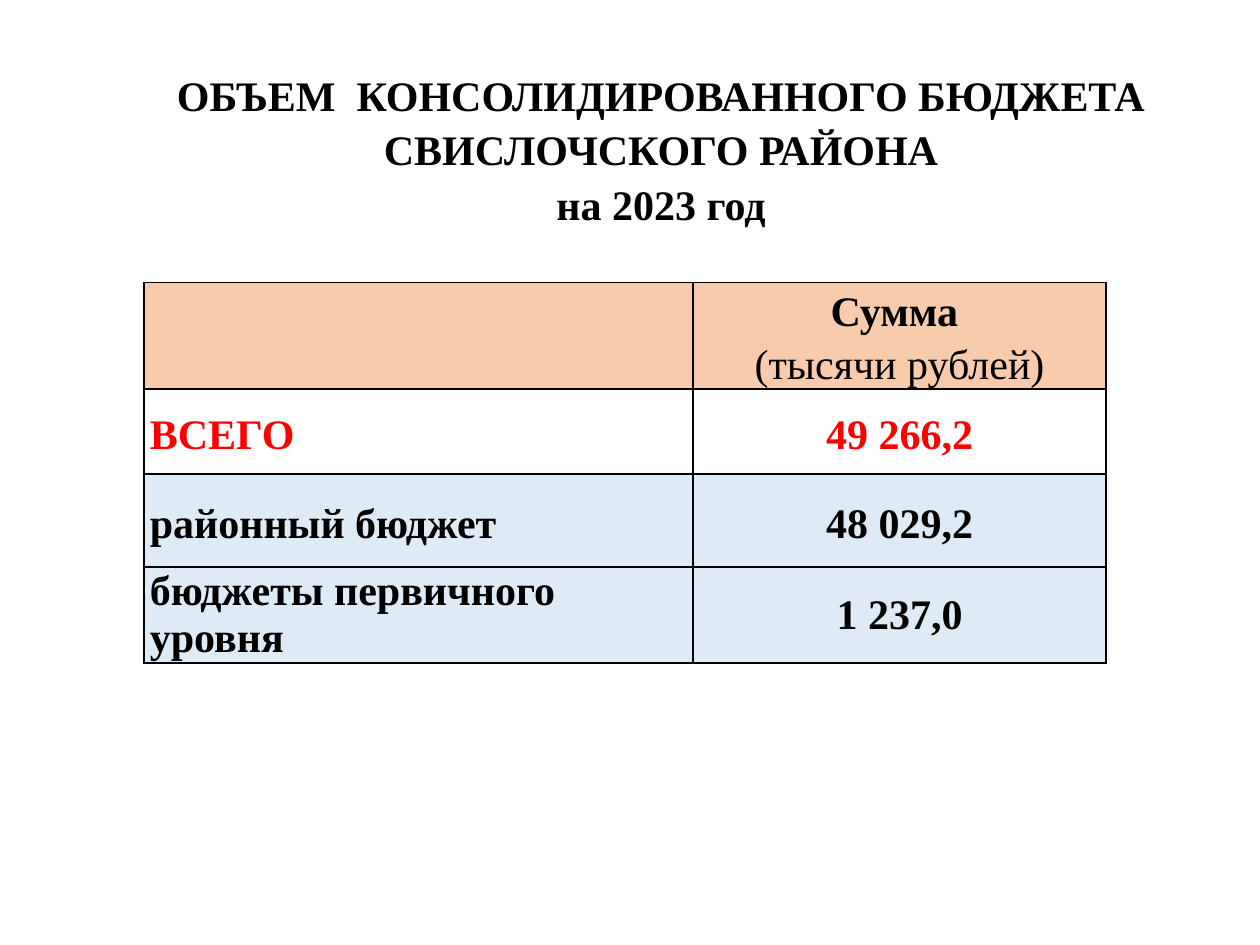
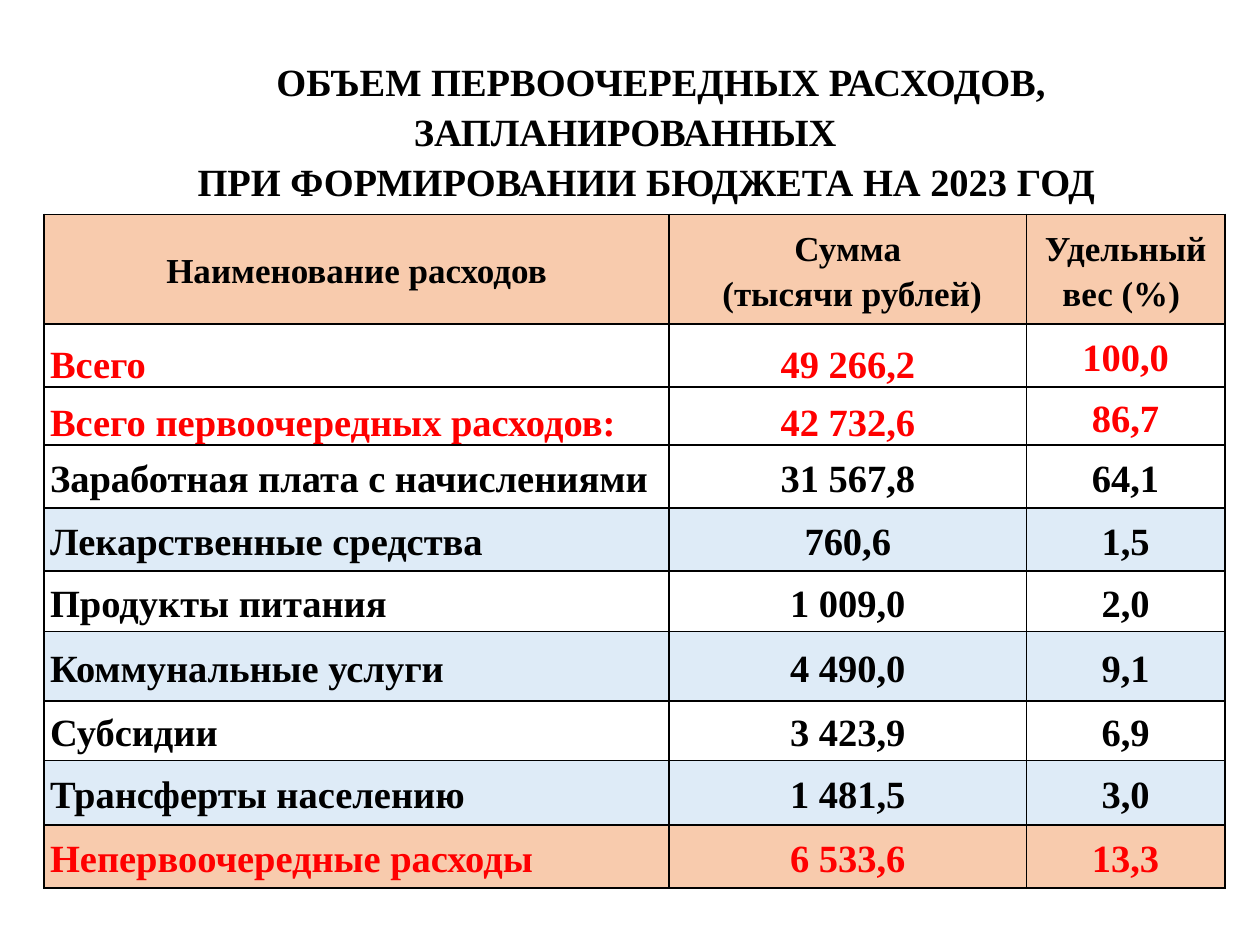
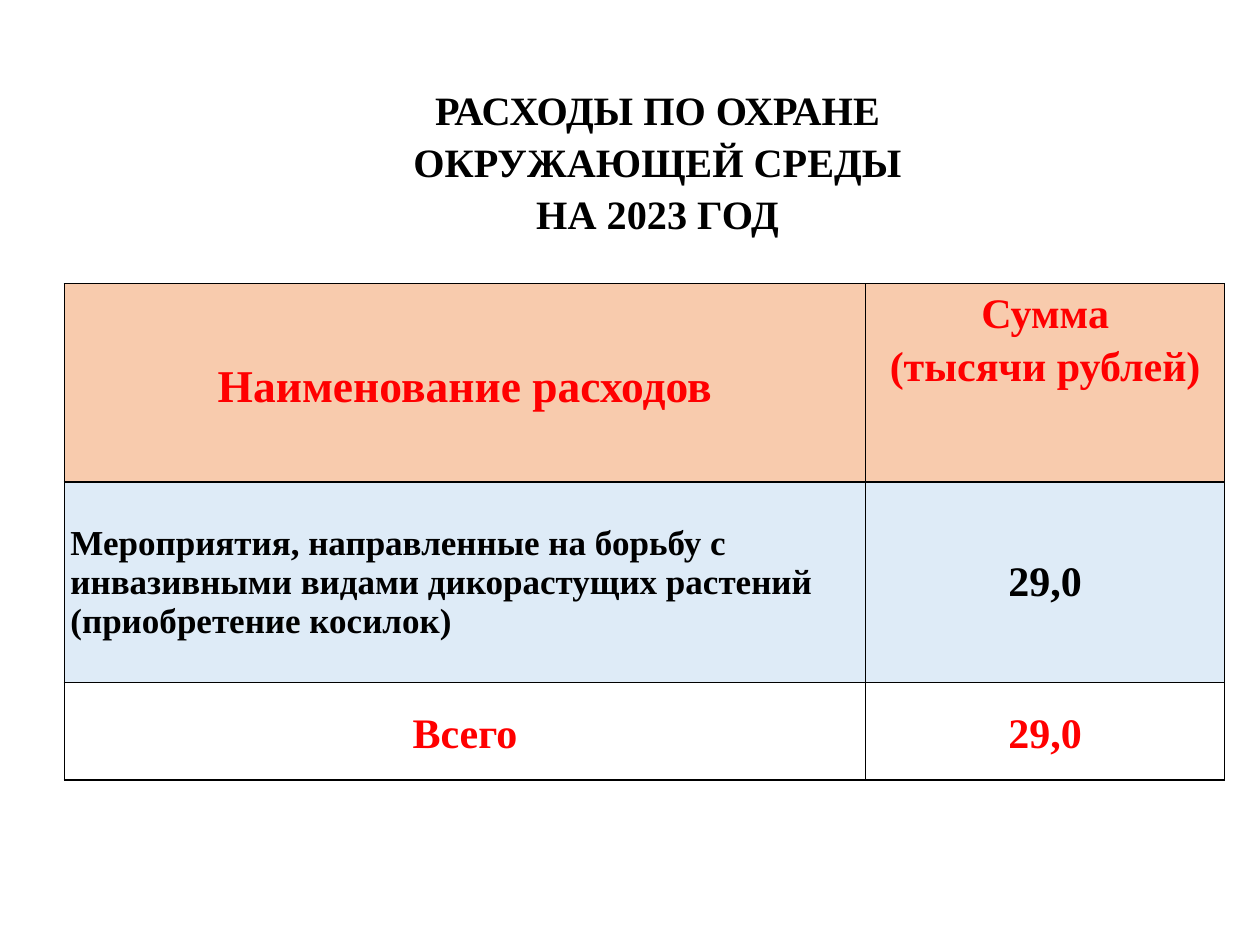
from dataclasses import dataclass

from lxml import etree
from pptx import Presentation
from pptx.dml.color import RGBColor
from pptx.enum.text import MSO_ANCHOR, MSO_AUTO_SIZE, PP_ALIGN
from pptx.oxml.ns import qn
from pptx.util import Cm, Pt

LEFT, CENTER = PP_ALIGN.LEFT, PP_ALIGN.CENTER
TOP, MIDDLE, BOTTOM = MSO_ANCHOR.TOP, MSO_ANCHOR.MIDDLE, MSO_ANCHOR.BOTTOM
NO_FIT = MSO_AUTO_SIZE.NONE

FONT = "Times New Roman"
COLORS = {"black": "000000", "red": "FF0000", "peach": "F8CBAD", "blue": "DEEBF7"}
TITLE_ONLY = 5
INDENT = 1.25


@dataclass
class Row:
    height: float
    texts: tuple
    fill: str = ""
    color: str = "black"
    spacing: float = 1.15


class Deck:
    """Holds the shared style and the current slide."""

    def __init__(self):
        self.prs = Presentation()
        self.prs.slide_width, self.prs.slide_height = Cm(25.4), Cm(19.05)
        self.s = None

    def rgb(self, name):
        return RGBColor.from_string(COLORS[name])

    def style(self, p, size, color="black", align=CENTER, spacing=1.0):
        p.alignment, p.line_spacing = align, spacing
        for r in p.runs:
            r.font.name, r.font.size, r.font.bold = FONT, Pt(size), True
            r.font.color.rgb = self.rgb(color)

    def slide(self, box, size, lines):
        """Start a slide; each title line is a text with its first-line indent."""
        self.s = self.prs.slides.add_slide(self.prs.slide_layouts[TITLE_ONLY])
        sp = self.s.shapes.title
        sp.left, sp.top, sp.width, sp.height = (Cm(v) for v in box)
        tf = sp.text_frame
        tf.text = "\n".join(text for text, _ in lines)
        tf.word_wrap, tf.auto_size, tf.vertical_anchor = True, NO_FIT, TOP
        for p, (_, indent) in zip(tf.paragraphs, lines):
            self.style(p, size, spacing=1.08)
            p._p.get_or_add_pPr().set("indent", str(Cm(indent)))

    def border(self, cell):
        tc_pr = cell._tc.get_or_add_tcPr()
        for side in ("lnL", "lnR", "lnT", "lnB"):
            ln = etree.SubElement(tc_pr, qn(f"a:{side}"), w=str(Pt(1)))
            fill = etree.SubElement(ln, qn("a:solidFill"))
            etree.SubElement(fill, qn("a:srgbClr"), val=COLORS["black"])

    def cell(self, cell, text, size, row, align):
        cell.margin_left = cell.margin_right = Cm(0.12)
        cell.margin_top = cell.margin_bottom = 0
        cell.vertical_anchor = MIDDLE
        self.border(cell)
        if row.fill:
            cell.fill.solid()
            cell.fill.fore_color.rgb = self.rgb(row.fill)
        else:
            cell.fill.background()
        cell.text_frame.text = text
        for p in cell.text_frame.paragraphs:
            self.style(p, size, row.color, align, row.spacing)

    def table(self, left, top, widths, rows, size):
        """Add a table with a centred header and left-aligned first column."""
        height = sum(row.height for row in rows)
        frame = self.s.shapes.add_table(len(rows), len(widths), Cm(left), Cm(top),
                                        Cm(sum(widths)), Cm(height))
        table = frame.table
        table.first_row = table.horz_banding = False
        for column, width in zip(table.columns, widths):
            column.width = Cm(width)
        for i, row in enumerate(rows):
            table.rows[i].height = Cm(row.height)
            for j, text in enumerate(row.texts):
                align = LEFT if i and not j else CENTER
                self.cell(table.cell(i, j), text, size, row, align)
        return table

    def resize(self, cell, size):
        for p in cell.text_frame.paragraphs:
            for r in p.runs:
                r.font.size = Pt(size)


def budget_slide(deck):
    deck.slide((0, 1.19, 25.4, 4.11), 24, [
        ("ОБЪЕМ  КОНСОЛИДИРОВАННОГО БЮДЖЕТА", INDENT),
        ("СВИСЛОЧСКОГО РАЙОНА", INDENT),
        ("на 2023 год", INDENT),
    ])
    table = deck.table(2.9, 5.69, (11.07, 8.33), [
        Row(2.08, ("", "Сумма \n(тысячи рублей)"), "peach"),
        Row(1.71, ("ВСЕГО", "49 266,2"), color="red"),
        Row(1.88, ("районный бюджет", "48 029,2"), "blue"),
        Row(1.93, ("бюджеты первичного уровня", "1 237,0"), "blue", spacing=1.0),
    ], 24)
    # Unit line of the header is not bold
    header = table.cell(0, 1)
    header.vertical_anchor = TOP
    header.text_frame.paragraphs[1].runs[0].font.bold = False


def priority_slide(deck):
    deck.slide((0, 0.97, 25.4, 3.84), 22, [
        ("ОБЪЕМ ПЕРВООЧЕРЕДНЫХ РАСХОДОВ, ЗАПЛАНИРОВАННЫХ ", INDENT),
        ("ПРИ ФОРМИРОВАНИИ БЮДЖЕТА НА 2023 ГОД", 0.65),
    ])
    table = deck.table(0.89, 4.32, (12.6, 7.2, 4), [
        Row(2.21, ("Наименование расходов", "Сумма\n (тысячи рублей)",
                   "Удельный вес (%) "), "peach"),
        Row(1.27, ("Всего", "49 266,2", "100,0"), color="red"),
        Row(1.17, ("Всего первоочередных расходов:", "42 732,6", "86,7"), color="red"),
        Row(1.27, ("Заработная плата с начислениями", "31 567,8", "64,1")),
        Row(1.27, ("Лекарственные средства", "760,6", "1,5"), "blue"),
        Row(1.22, ("Продукты питания", "1 009,0", "2,0")),
        Row(1.4, ("Коммунальные услуги", "4 490,0", "9,1"), "blue"),
        Row(1.2, ("Субсидии", "3 423,9", "6,9")),
        Row(1.3, ("Трансферты населению", "1 481,5", "3,0"), "blue"),
        Row(1.27, ("Непервоочередные расходы", "6 533,6", "13,3"), "peach", "red"),
    ], 22)
    for cell in table.rows[0].cells:
        deck.resize(cell, 20)
    # Names and sums of the two totals sit at the bottom
    for i in (1, 2):
        for j in (0, 1):
            table.cell(i, j).vertical_anchor = BOTTOM


def environment_slide(deck):
    deck.slide((6.91, 1.52, 12.7, 3.2), 23, [
        ("РАСХОДЫ ПО ОХРАНЕ ОКРУЖАЮЩЕЙ СРЕДЫ", 0),
        ("НА 2023 ГОД", 0),
    ])
    table = deck.table(1.3, 5.72, (16.15, 7.24), [
        Row(4, ("Наименование расходов", "Сумма\n(тысячи рублей)"), "peach", "red"),
        Row(4.04, ("Мероприятия, направленные на борьбу с инвазивными видами "
                   "дикорастущих растений (приобретение косилок)", "29,0"),
            "blue", spacing=1.0),
        Row(1.96, ("Всего", "29,0"), color="red"),
    ], 24)
    deck.resize(table.cell(0, 0), 26)
    deck.resize(table.cell(1, 0), 20)
    table.cell(0, 1).vertical_anchor = TOP
    table.cell(2, 0).text_frame.paragraphs[0].alignment = CENTER


def main():
    deck = Deck()
    budget_slide(deck)
    priority_slide(deck)
    environment_slide(deck)
    deck.prs.save("out.pptx")


if __name__ == "__main__":
    main()
